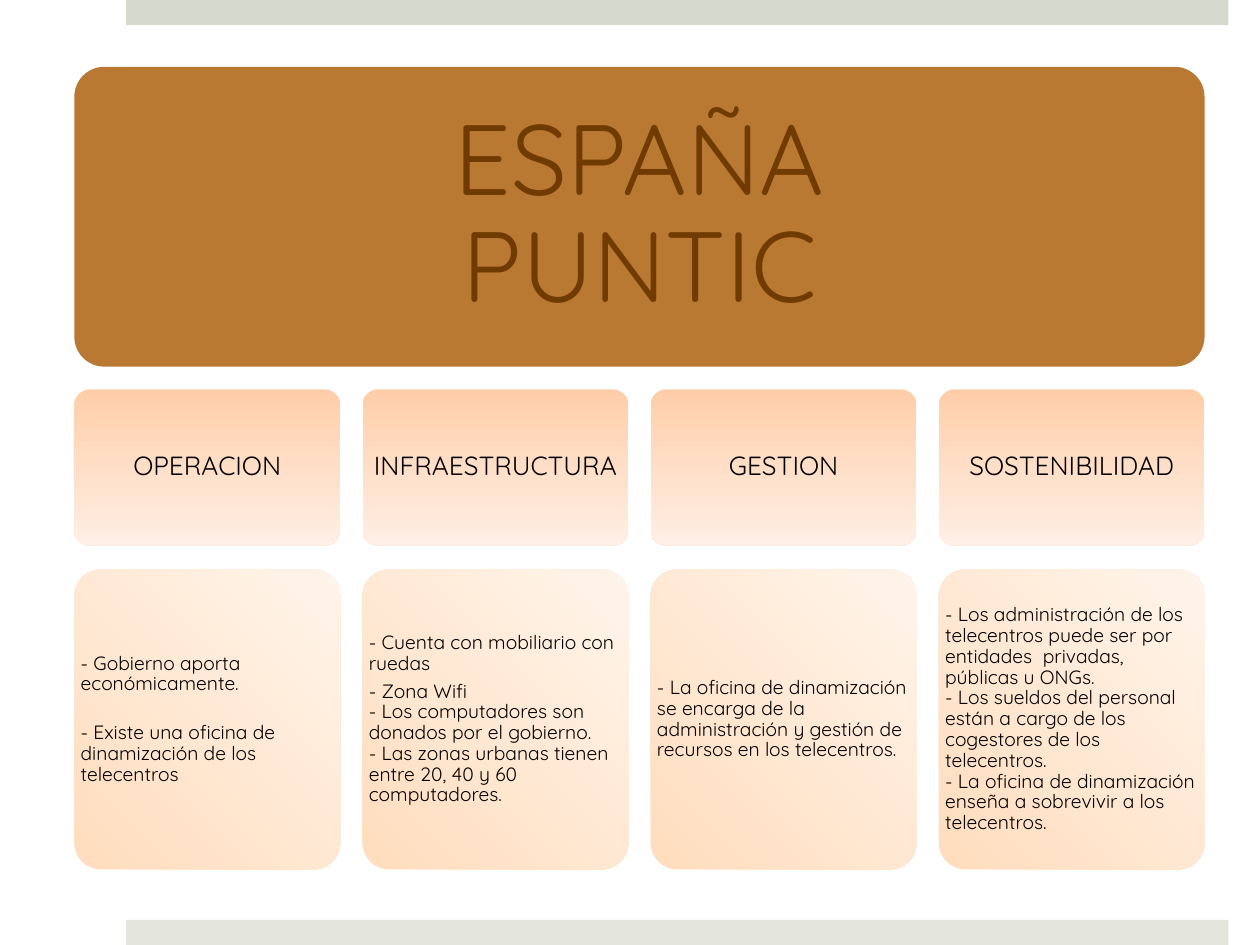
from lxml import etree
from pptx import Presentation
from pptx.dml.color import RGBColor
from pptx.enum.shapes import MSO_SHAPE
from pptx.enum.text import MSO_ANCHOR, PP_ALIGN
from pptx.oxml.ns import qn
from pptx.util import Inches, Pt

RECTANGLE = MSO_SHAPE.RECTANGLE
ROUNDED = MSO_SHAPE.ROUNDED_RECTANGLE
MIDDLE = MSO_ANCHOR.MIDDLE
LEFT, CENTER = PP_ALIGN.LEFT, PP_ALIGN.CENTER
color = RGBColor.from_string

COLUMNS = [
    ("OPERACION", [
        ["- Gobierno aporta económicamente."],
        ["- Existe una oficina de dinamización de los telecentros"],
    ], 12),
    ("INFRAESTRUCTURA", [
        ["- Cuenta con mobiliario con ruedas"],
        ["- Zona Wifi",
         "- Los computadores son donados por el gobierno.",
         "- Las zonas urbanas tienen entre 20, 40 y 60  computadores."],
    ], 0),
    ("GESTION", [
        ["- La oficina de dinamización se encarga de la administración "
         "y gestión de recursos en los telecentros."],
    ], 0),
    ("SOSTENIBILIDAD", [
        ["- Los administración de los telecentros puede ser por "
         "entidades  privadas, públicas u ONGs.",
         "- Los sueldos del personal están a cargo de los  cogestores "
         "de los telecentros.",
         "- La oficina de dinamización enseña a sobrevivir a los telecentros."],
    ], 0),
]

presentation = Presentation()
presentation.slide_width = Inches(10)
presentation.slide_height = Inches(7.5)
slide = presentation.slides.add_slide(presentation.slide_layouts[6])


def add_panel(kind, box, fill, angle=None):
    """Fill with one colour, or with a gradient when fill holds two."""
    shape = slide.shapes.add_shape(kind, *map(Inches, box))
    shape.shadow.inherit = False
    shape.line.fill.background()
    if kind == ROUNDED:
        shape.adjustments[0] = 0.1
    if angle is None:
        shape.fill.solid()
        shape.fill.fore_color.rgb = color(fill)
    else:
        shape.fill.gradient()
        shape.fill.gradient_angle = angle
        for position, (stop, shade) in enumerate(zip(shape.fill.gradient_stops, fill)):
            stop.position = position
            stop.color.rgb = color(shade)
    return shape


def add_text(box, paragraphs, size, shade, inset, alignment, gap=0):
    """Each paragraph is a list of lines; gap is the space between paragraphs."""
    frame = slide.shapes.add_textbox(*map(Inches, box)).text_frame
    frame.word_wrap = True
    frame.vertical_anchor = MIDDLE
    frame.margin_left = frame.margin_right = Inches(inset)
    frame.margin_top = frame.margin_bottom = Inches(inset)
    for index, lines in enumerate(paragraphs):
        paragraph = frame.add_paragraph() if index else frame.paragraphs[0]
        paragraph.alignment = alignment
        paragraph.line_spacing = 0.9
        paragraph.space_before = Pt(gap if index else 0)
        paragraph.space_after = Pt(round(size * 0.35))
        for number, line in enumerate(lines):
            if number:
                paragraph.add_line_break()
            run = paragraph.add_run()
            run.text = line
            run.font.name = "Quicksand"
            run.font.size = Pt(size)
            run.font.color.rgb = color(shade)


add_panel(RECTANGLE, (1, 0, 8.75, 0.2), "D6D9CD")
add_panel(RECTANGLE, (1, 7.3, 8.75, 0.2), "E4E6DE")

title_box = (0.59, 0.53, 8.97, 2.38)
title_panel = add_panel(ROUNDED, title_box, "A85801")
title_color = title_panel.fill._xPr.find(qn("a:solidFill"))[0]
etree.SubElement(title_color, qn("a:alpha"), val="80000")
add_text(title_box, [["ESPAÑA", "PUNTIC"]], 57, "703B01", 0.24, CENTER)

for column, (heading, details, gap) in enumerate(COLUMNS):
    left = 0.59 + column * 2.287
    heading_box = (left, 3.09, 2.11, 1.24)
    detail_box = (left, 4.52, 2.11, 2.38)
    add_panel(ROUNDED, heading_box, ("FFCEA9", "FFEFE5"), 270)
    add_text(heading_box, [[heading]], 15, "000000", 0.06, CENTER)
    add_panel(ROUNDED, detail_box, ("FFDDBE", "FFF4EA"), 45)
    add_text(detail_box, details, 11, "000000", 0.05, LEFT, gap)

presentation.save("out.pptx")
